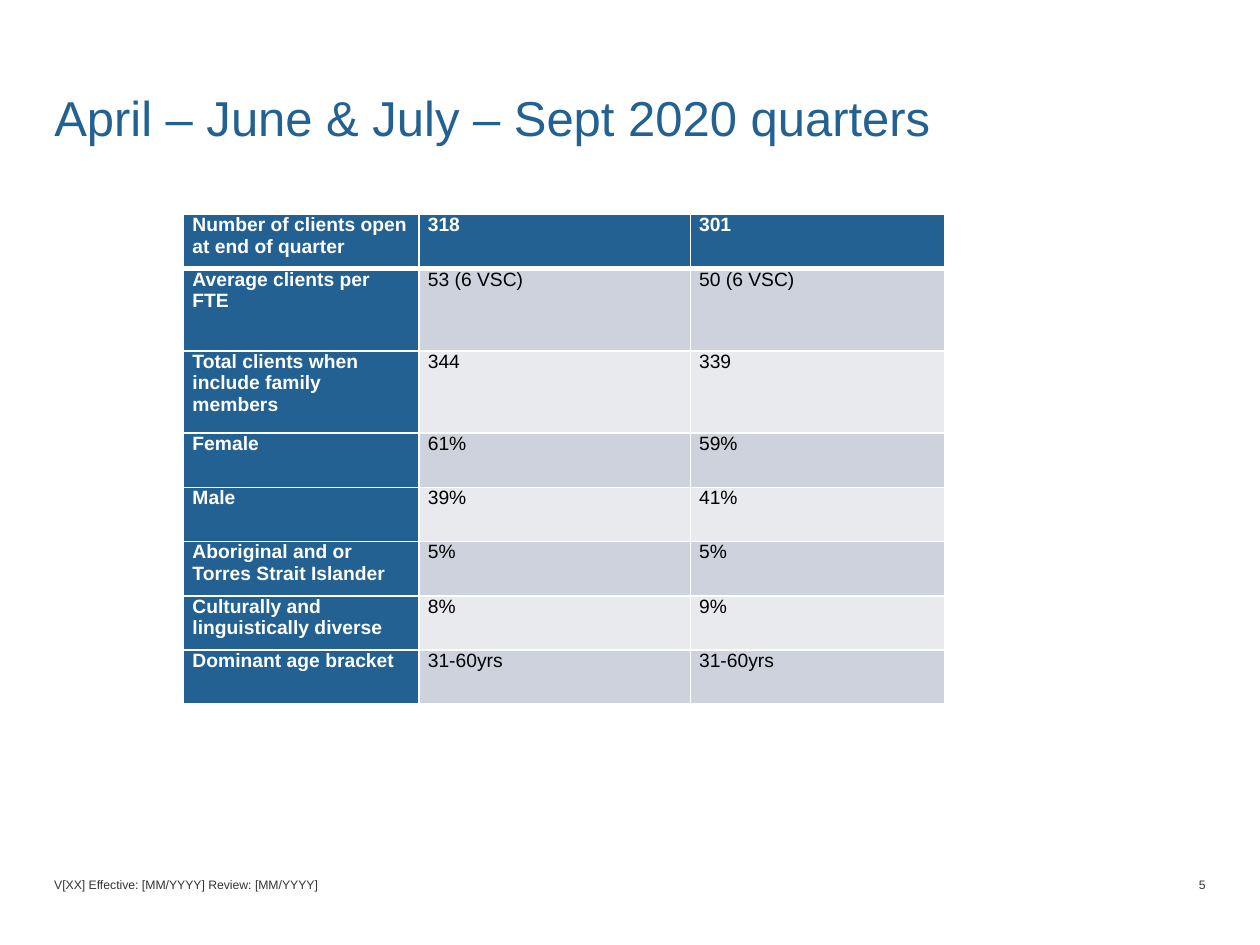
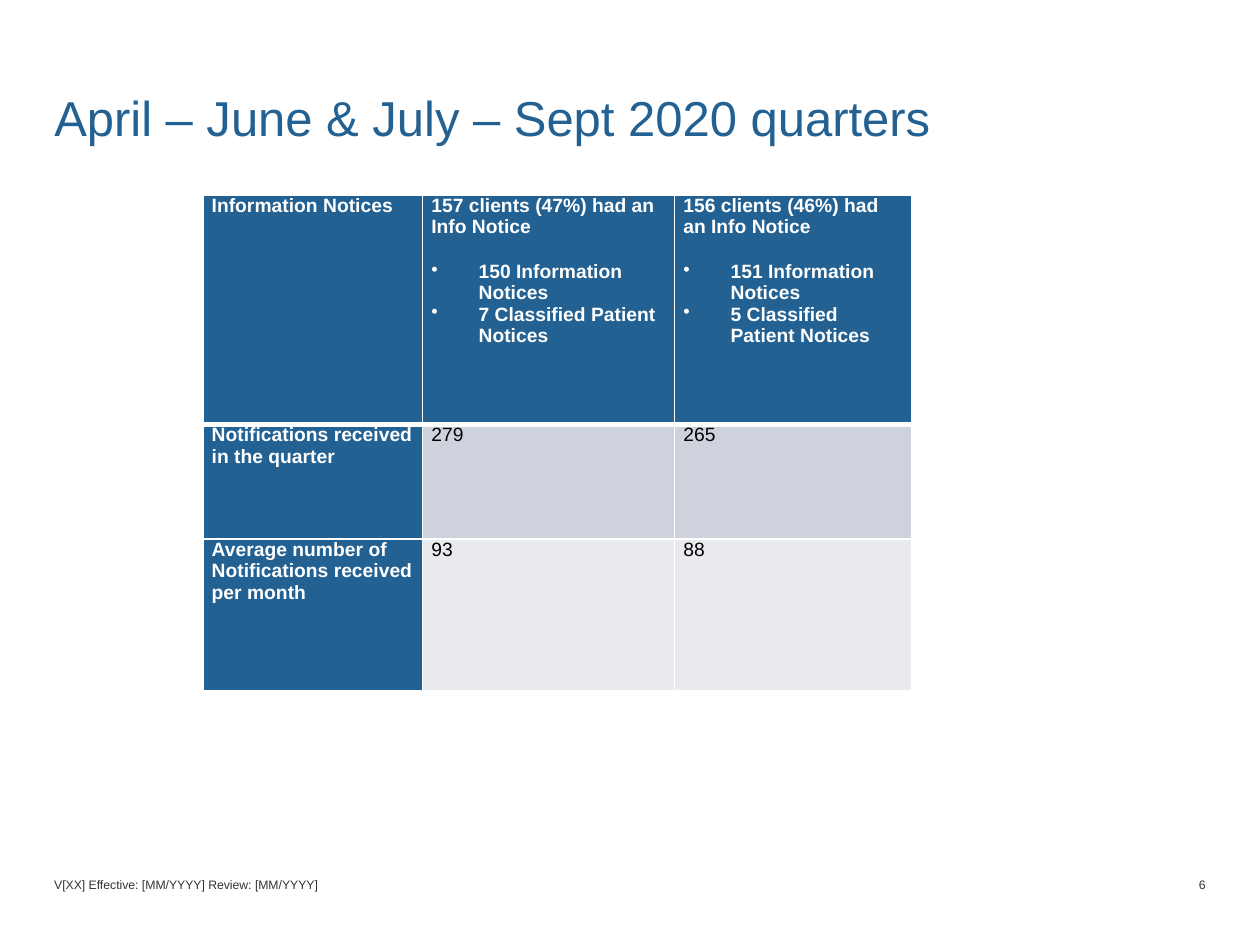
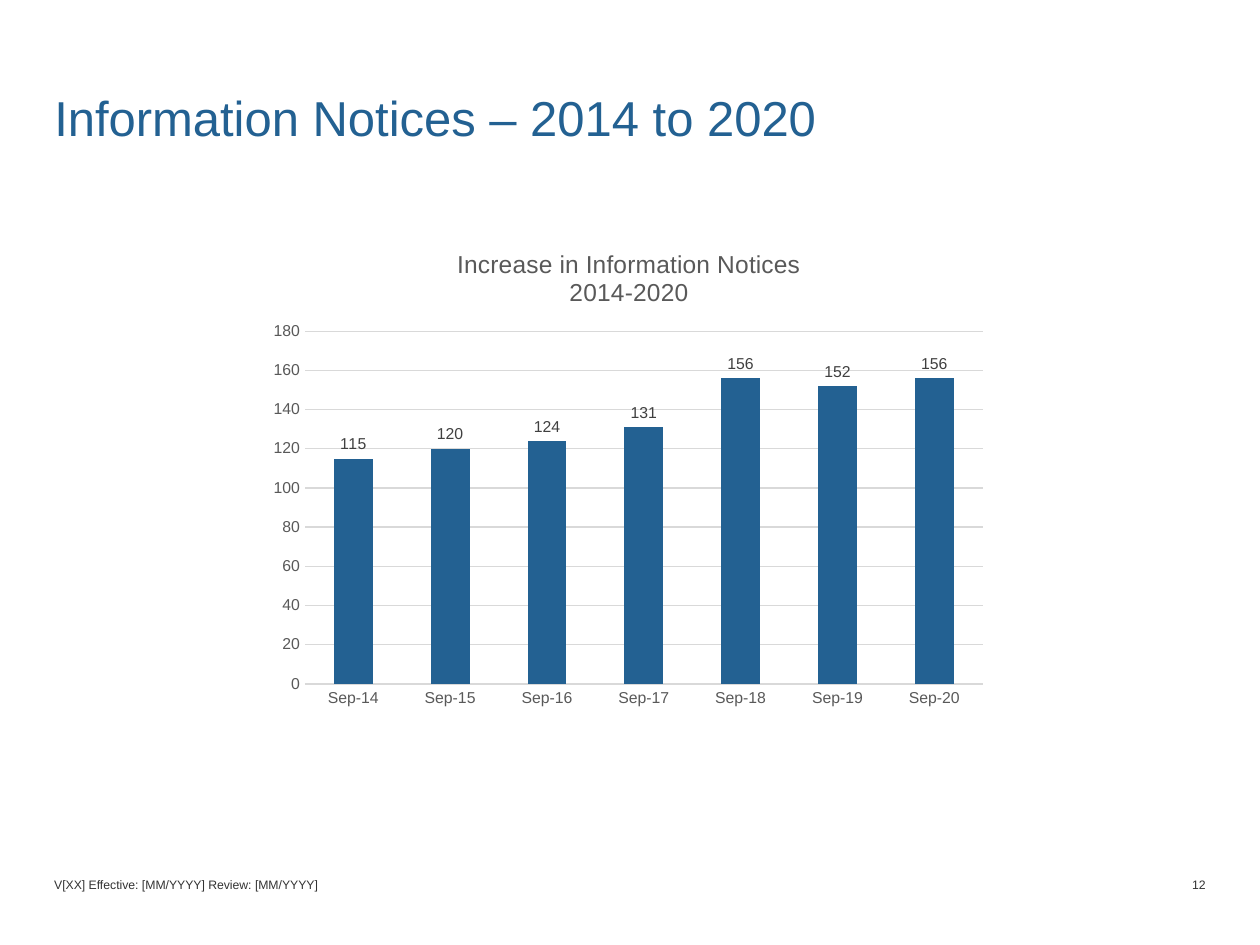
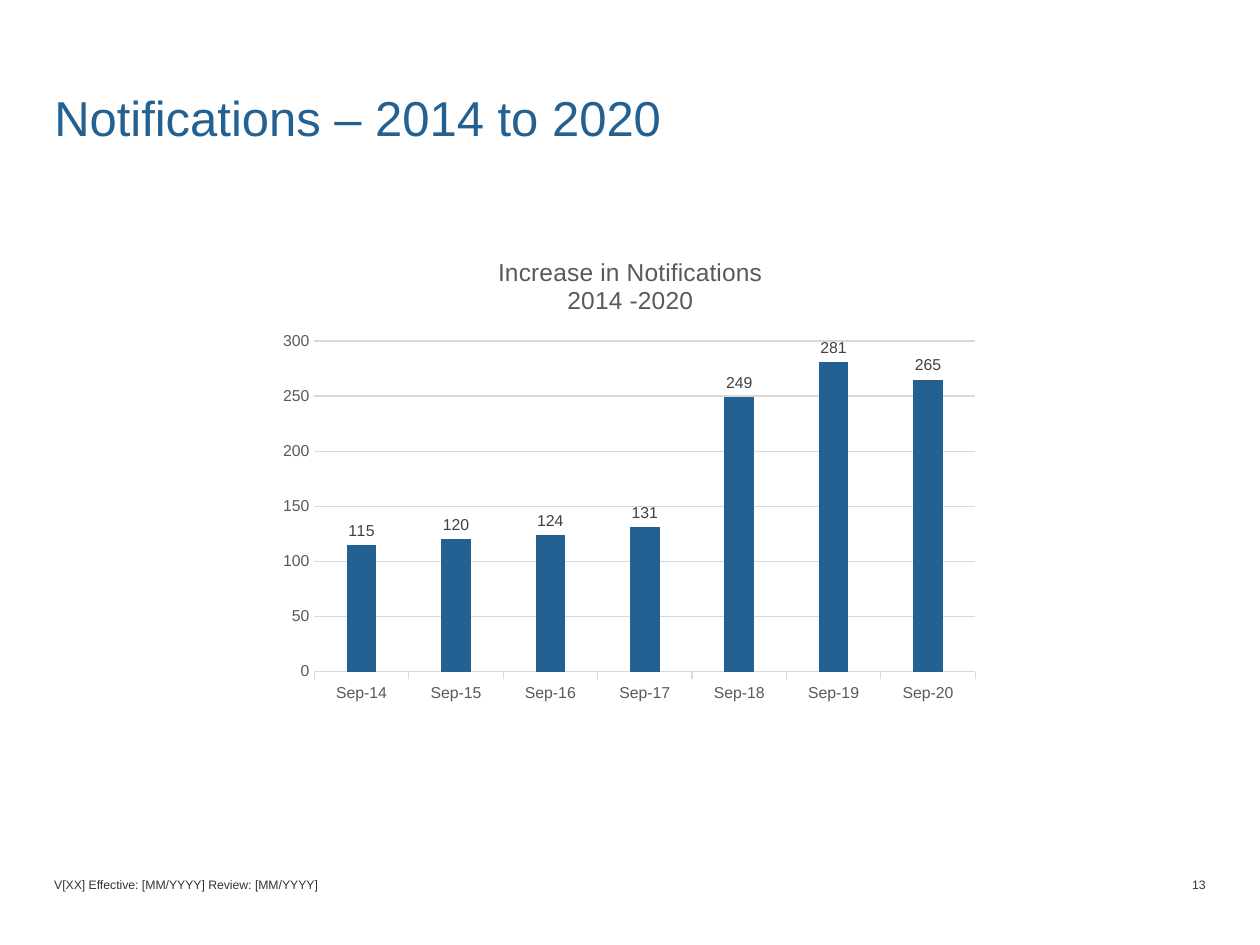
import lxml.etree
import pptx
import pptx.chart.data
import pptx.dml.color
import pptx.enum.chart
import pptx.enum.text
import pptx.oxml
import pptx.oxml.ns
import pptx.util

Pt = pptx.util.Pt
ALIGN = pptx.enum.text.PP_ALIGN
ANCHOR = pptx.enum.text.MSO_ANCHOR
TICK = pptx.enum.chart.XL_TICK_MARK

BLUE, WHITE, BLACK = "236192", "FFFFFF", "000000"
BANDS = ["E8EAEE", "CDD2DC"]
FOOTER_GREY, AXIS_GREY, LABEL_GREY, LINE_GREY = "333333", "595959", "404040", "D9D9D9"
QUARTERS = "April – June & July – Sept 2020 quarters"
FOOTER = "V[XX] Effective: [MM/YYYY] Review: [MM/YYYY]"
SEPTEMBERS = [f"Sep-{year}" for year in range(14, 21)]
BULLET_INDENT = 27


def color(value):
    return pptx.dml.color.RGBColor.from_string(value)


def apply(target, formats):
    for name, value in formats.items():
        setattr(target, name, value)


class SlideWriter:
    def __init__(self, deck):
        self.deck = deck
        self.page = None

    def font(self, target, size, shade, bold=False):
        apply(target, {"name": "Arial", "size": Pt(size), "bold": bold})
        target.color.rgb = color(shade)

    def start(self, title, number):
        self.page = self.deck.slides.add_slide(self.deck.slide_layouts[5])
        self.title(title)
        self.text(31, 561.5, FOOTER, ALIGN.LEFT)
        self.text(658, 31, str(number), ALIGN.RIGHT)

    def frame(self, frame, text, size, shade, anchor, align):
        apply(frame, {
            "text": text, "word_wrap": True, "vertical_anchor": anchor,
            "auto_size": pptx.enum.text.MSO_AUTO_SIZE.NONE,
            "margin_left": 0, "margin_right": 0, "margin_top": 0, "margin_bottom": 0,
        })
        para = frame.paragraphs[0]
        para.alignment = align
        self.font(para.runs[0].font, size, shade)

    def title(self, text):
        box = self.page.shapes.title
        apply(box, {"left": Pt(31), "top": Pt(9.5), "width": Pt(658), "height": Pt(74)})
        self.frame(box.text_frame, text, 28, BLUE, ANCHOR.BOTTOM, ALIGN.LEFT)

    def text(self, left, width, text, align):
        box = self.page.shapes.add_textbox(Pt(left), Pt(497), Pt(width), Pt(17))
        self.frame(box.text_frame, text, 7, FOOTER_GREY, ANCHOR.MIDDLE, align)

    def table(self, left, top, widths, heights, rows):
        grid = self.page.shapes.add_table(
            len(rows), len(widths), Pt(left), Pt(top),
            Pt(sum(widths)), Pt(sum(heights))).table
        for column, width in zip(grid.columns, widths):
            column.width = Pt(width)
        for index, (row, height) in enumerate(zip(rows, heights)):
            grid.rows[index].height = Pt(height)
            for position, content in enumerate(row):
                heading = index == 0 or position == 0
                cell = grid.cell(index, position)
                self.cell(cell, content, heading, BLUE if heading else BANDS[index % 2])
                self.borders(cell, {"L": 1, "R": 1, "T": 3 if index == 1 else 1,
                                    "B": 3 if index == 0 else 1})

    def cell(self, cell, content, heading, fill):
        apply(cell, {"margin_left": Pt(5), "margin_right": Pt(5),
                     "margin_top": 0, "margin_bottom": 0})
        cell.fill.solid()
        cell.fill.fore_color.rgb = color(fill)
        lead, *bullets = [content] if isinstance(content, str) else content
        cell.text_frame.text = "\n".join([lead, *bullets])
        for order, para in enumerate(cell.text_frame.paragraphs):
            if order:
                self.bullet(para)
            if order == 1:
                para.space_before = Pt(13)
            self.font(para.runs[0].font, 11, WHITE if heading else BLACK, heading)

    def bullet(self, para):
        properties = para._p.get_or_add_pPr()
        properties.set("marL", str(Pt(BULLET_INDENT)))
        properties.set("indent", str(-Pt(BULLET_INDENT)))
        mark = lxml.etree.SubElement(properties, pptx.oxml.ns.qn("a:buChar"))
        mark.set("char", "•")

    def borders(self, cell, weights):
        properties = cell._tc.get_or_add_tcPr()
        for order, (side, weight) in enumerate(weights.items()):
            properties.insert(order, pptx.oxml.parse_xml(
                f'<a:ln{side} {pptx.oxml.ns.nsdecls("a")} w="{Pt(weight)}">'
                f'<a:solidFill><a:srgbClr val="{WHITE}"/></a:solidFill></a:ln{side}>'))

    def line(self, line):
        line.width = Pt(0.75)
        line.color.rgb = color(LINE_GREY)

    def chart(self, place, title, values, top, step, gap, overlap, tick, plot_area):
        data = pptx.chart.data.CategoryChartData()
        data.categories = SEPTEMBERS
        data.add_series("Series 1", values)
        chart = self.page.shapes.add_chart(
            pptx.enum.chart.XL_CHART_TYPE.COLUMN_CLUSTERED, *map(Pt, place), data).chart
        self.font(chart.font, 10, BLACK)
        apply(chart, {"has_legend": False, "has_title": True})
        chart.chart_title.include_in_layout = False
        heading = chart.chart_title.text_frame
        heading.text = title
        for para in heading.paragraphs:
            self.font(para.runs[0].font, 14, AXIS_GREY)

        plot = chart.plots[0]
        apply(plot, {"gap_width": gap, "overlap": overlap,
                     "vary_by_categories": False, "has_data_labels": True})
        apply(plot.data_labels, {
            "show_value": True, "number_format": "General", "number_format_is_linked": False,
            "position": pptx.enum.chart.XL_LABEL_POSITION.OUTSIDE_END})
        self.font(plot.data_labels.font, 9, LABEL_GREY)
        bars = plot.series[0].format.fill
        bars.solid()
        bars.fore_color.rgb = color(BLUE)

        for axis, mark in ((chart.category_axis, tick), (chart.value_axis, TICK.NONE)):
            apply(axis, {"major_tick_mark": mark, "minor_tick_mark": TICK.NONE})
            self.font(axis.tick_labels.font, 9, AXIS_GREY)
        self.line(chart.category_axis.format.line)
        apply(chart.value_axis, {"minimum_scale": 0, "maximum_scale": top,
                                 "major_unit": step, "has_major_gridlines": True})
        self.line(chart.value_axis.major_gridlines.format.line)
        chart.value_axis.format.line.fill.background()
        self.plot_layout(chart, plot_area)

    def plot_layout(self, chart, plot_area):
        area = chart._chartSpace.find(".//" + pptx.oxml.ns.qn("c:plotArea"))
        for layout in area.findall(pptx.oxml.ns.qn("c:layout")):
            area.remove(layout)
        settings = [("layoutTarget", "inner"), ("xMode", "edge"), ("yMode", "edge"),
                    *zip("xywh", plot_area)]
        content = "".join(f'<c:{name} val="{value}"/>' for name, value in settings)
        area.insert(0, pptx.oxml.parse_xml(
            f'<c:layout {pptx.oxml.ns.nsdecls("c")}>'
            f"<c:manualLayout>{content}</c:manualLayout></c:layout>"))


def main():
    deck = pptx.Presentation()
    apply(deck, {"slide_width": Pt(720), "slide_height": Pt(540)})
    writer = SlideWriter(deck)

    writer.start(QUARTERS, 5)
    writer.table(105, 122.5, [134.5, 155, 145.5], [31, 47, 47] + [31] * 5, [
        ["Number of clients open at end of quarter", "318", "301"],
        ["Average clients per FTE", "53 (6 VSC)", "50 (6 VSC)"],
        ["Total clients when include family members", "344", "339"],
        ["Female", "61%", "59%"],
        ["Male", "39%", "41%"],
        ["Aboriginal and or Torres Strait Islander", "5%", "5%"],
        ["Culturally and linguistically diverse", "8%", "9%"],
        ["Dominant age bracket", "31-60yrs", "31-60yrs"],
    ])

    writer.start(QUARTERS, 6)
    writer.table(116, 111.5, [125.5, 144, 135.5], [131, 65.5, 87], [
        ["Information Notices",
         ["157 clients (47%) had an Info Notice",
          "150 Information Notices", "7 Classified Patient Notices"],
         ["156 clients (46%) had an Info Notice",
          "151 Information Notices", "5 Classified Patient Notices"]],
        ["Notifications received in the quarter", "279", "265"],
        ["Average number of Notifications received per month", "93", "88"],
    ])

    writer.start("Information Notices – 2014 to 2020", 12)
    writer.chart((149, 130.5, 421, 280), "Increase in Information Notices\n2014-2020",
                 [115, 120, 124, 131, 156, 152, 156], top=180, step=20, gap=150, overlap=0,
                 tick=TICK.NONE, plot_area=(0.06, 0.21, 0.92, 0.72))

    writer.start("Notifications – 2014 to 2020", 13)
    writer.chart((155, 135.5, 410.5, 270), "Increase in Notifications\n2014 -2020",
                 [115, 120, 124, 131, 249, 281, 265], top=300, step=50, gap=219, overlap=-27,
                 tick=TICK.OUTSIDE, plot_area=(0.06, 0.22, 0.92, 0.7))

    deck.save("out.pptx")


if __name__ == "__main__":
    main()
